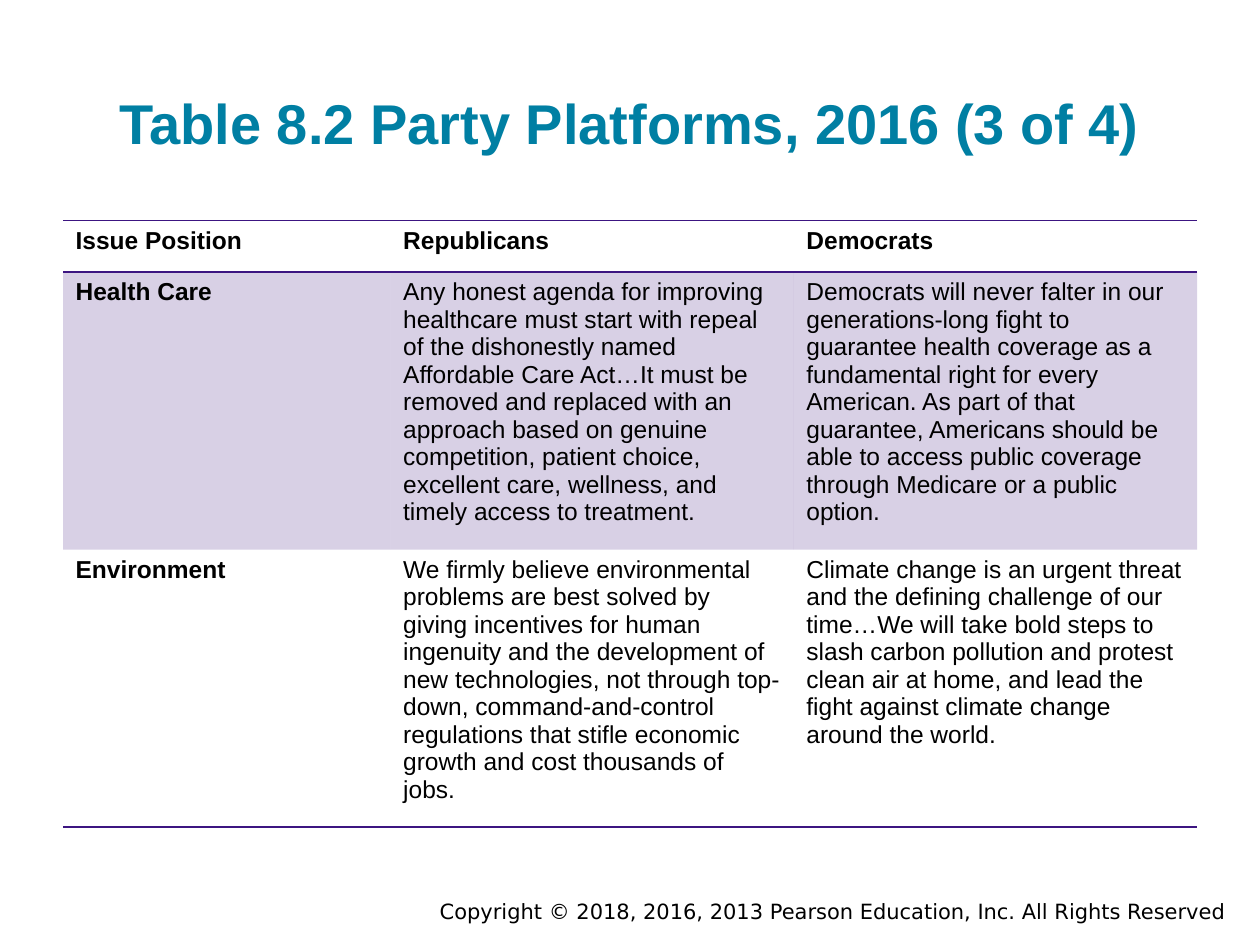
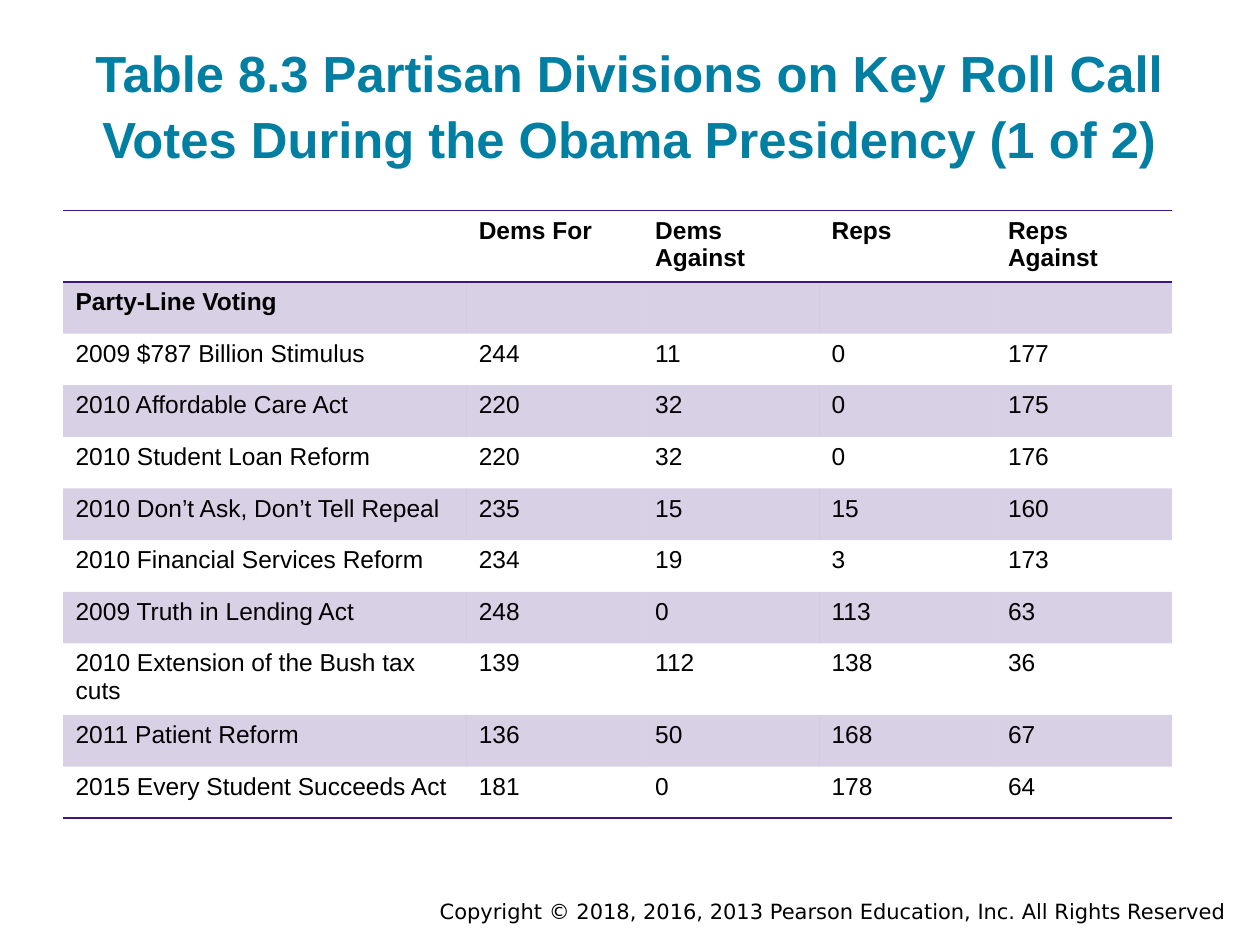
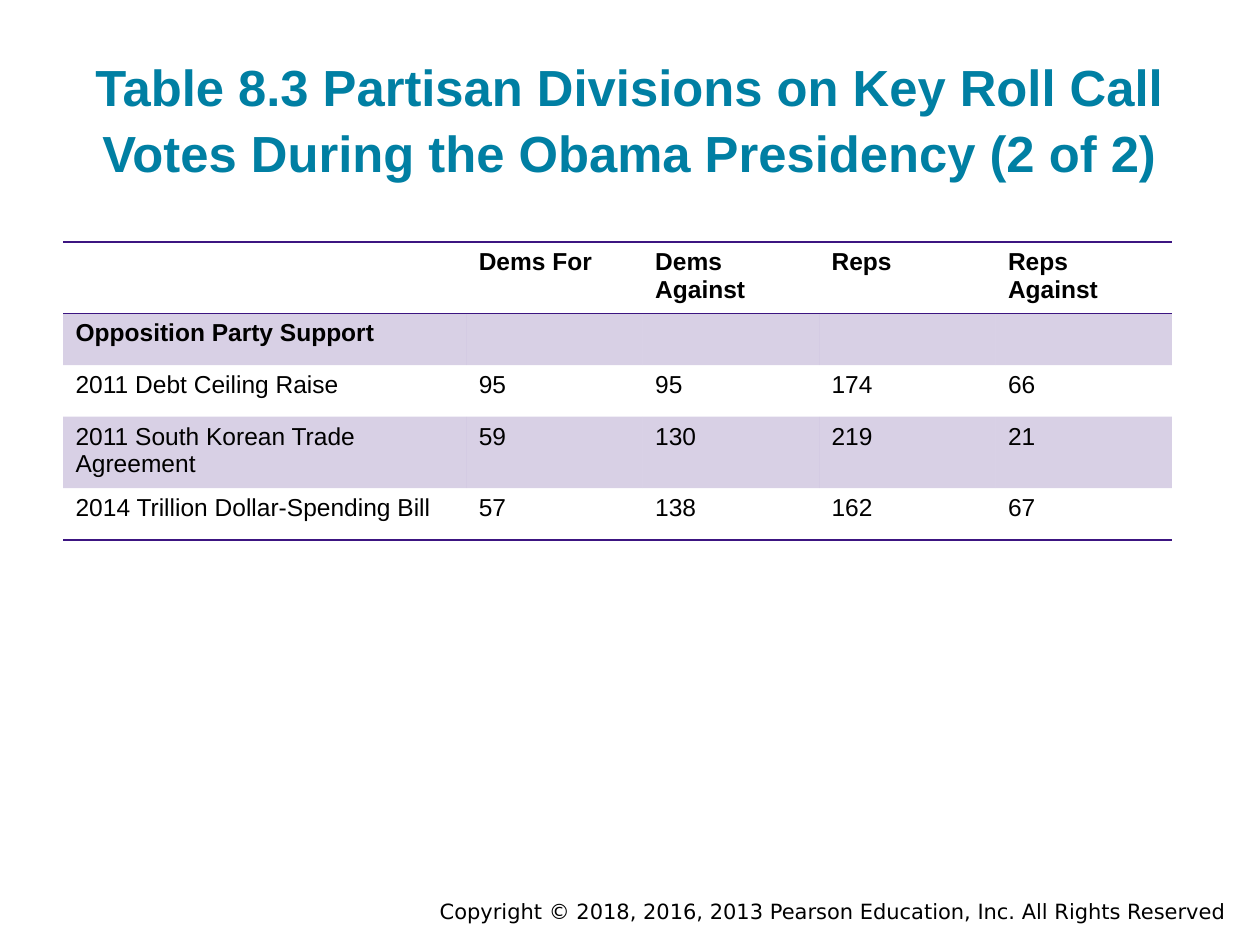
from dataclasses import dataclass

from lxml import etree
from pptx import Presentation
from pptx import util as u
from pptx.dml.color import RGBColor
from pptx.enum import text as t
from pptx.oxml import ns


@dataclass(frozen=True)
class Theme:
    teal: str = "007FA3"
    purple: str = "3C1581"
    black: str = "000000"
    font: str = "Arial"
    footer_font: str = "DejaVu Sans"
    title_size: int = 32
    long_title_size: int = 29
    table_size: int = 14
    footer_size: int = 12
    band_opacity: int = 20
    rule_width: int = 1


theme = Theme()
COPYRIGHT = "Copyright © 2018, 2016, 2013 Pearson Education, Inc. All Rights Reserved"
NO_STYLE_NO_GRID = "{2D5ABB26-0587-4C30-8999-92F81FD0307C}"
ROW_HEIGHT = 0.41
PLATFORM_COLUMNS = [2.6, 3.2, 3.2]
VOTE_COLUMNS = [3.2] + [1.4] * 4
VOTE_HEADER = ["", "Dems For", "Dems Against", "Reps", "Reps Against"]
BOLD_LABELS = {"Health Care", "Environment", "Party-Line Voting", "Opposition Party Support"}

# Each slide: title, title size, title height, table top, column widths, rows
SLIDES = [
    ("Table 8.2 Party Platforms, 2016 (3 of 4)", theme.title_size, 1.1, 1.75, PLATFORM_COLUMNS, [
        ["Issue Position", "Republicans", "Democrats"],
        ["Health Care",
         "Any honest agenda for improving healthcare must start with repeal of the dishonestly "
         "named Affordable Care Act…It must be removed and replaced with an approach based on "
         "genuine competition, patient choice, excellent care, wellness, and timely access to "
         "treatment.",
         "Democrats will never falter in our generations-long fight to guarantee health coverage "
         "as a fundamental right for every American. As part of that guarantee, Americans should "
         "be able to access public coverage through Medicare or a public option."],
        ["Environment",
         "We firmly believe environmental problems are best solved by giving incentives for human "
         "ingenuity and the development of new technologies, not through top-down, "
         "command-and-control regulations that stifle economic growth and cost thousands of jobs.",
         "Climate change is an urgent threat and the defining challenge of our time…We will take "
         "bold steps to slash carbon pollution and protest clean air at home, and lead the fight "
         "against climate change around the world."],
    ]),
    ("Table 8.3 Partisan Divisions on Key Roll Call Votes During the Obama Presidency (1 of 2)",
     theme.long_title_size, 1.2, 1.67, VOTE_COLUMNS, [
        VOTE_HEADER,
        ["Party-Line Voting", "", "", "", ""],
        ["2009 $787 Billion Stimulus", 244, 11, 0, 177],
        ["2010 Affordable Care Act", 220, 32, 0, 175],
        ["2010 Student Loan Reform", 220, 32, 0, 176],
        ["2010 Don’t Ask, Don’t Tell Repeal", 235, 15, 15, 160],
        ["2010 Financial Services Reform", 234, 19, 3, 173],
        ["2009 Truth in Lending Act", 248, 0, 113, 63],
        ["2010 Extension of the Bush tax cuts", 139, 112, 138, 36],
        ["2011 Patient Reform", 136, 50, 168, 67],
        ["2015 Every Student Succeeds Act", 181, 0, 178, 64],
    ]),
    ("Table 8.3 Partisan Divisions on Key Roll Call Votes During the Obama Presidency (2 of 2)",
     theme.long_title_size, 1.31, 1.92, VOTE_COLUMNS, [
        VOTE_HEADER,
        ["Opposition Party Support", "", "", "", ""],
        ["2011 Debt Ceiling Raise", 95, 95, 174, 66],
        ["2011 South Korean Trade Agreement", 59, 130, 219, 21],
        ["2014 Trillion Dollar-Spending Bill", 57, 138, 162, 67],
    ]),
]


def write(frame, text, *, size, font=theme.font, color=theme.black, bold=False,
          align=t.PP_ALIGN.LEFT, line_spacing=None):
    para = frame.paragraphs[0]
    para.alignment = align
    para.line_spacing = line_spacing
    span = para.add_run()
    span.text = text
    span.font.name = font
    span.font.size = u.Pt(size)
    span.font.bold = bold
    span.font.color.rgb = RGBColor.from_string(color)


def format_cell(cell, edges, shaded):
    """Rule the given edges (lnT, lnB), then apply the translucent band or no fill."""
    properties = cell._tc.get_or_add_tcPr()
    for edge in edges:
        line = etree.SubElement(properties, ns.qn(f"a:{edge}"), w=str(u.Pt(theme.rule_width)))
        solid = etree.SubElement(line, ns.qn("a:solidFill"))
        etree.SubElement(solid, ns.qn("a:srgbClr"), val=theme.purple)
    if not shaded:
        cell.fill.background()
        return
    cell.fill.solid()
    cell.fill.fore_color.rgb = RGBColor.from_string(theme.purple)
    color = properties.find(ns.qn("a:solidFill"))[0]
    etree.SubElement(color, ns.qn("a:alpha"), val=str(theme.band_opacity * 1000))


deck = Presentation()
deck.slide_width, deck.slide_height = u.Inches(10), u.Inches(7.5)
title_only = deck.slide_layouts[5]

for heading, heading_size, heading_height, table_top, widths, rows in SLIDES:
    page = deck.slides.add_slide(title_only)

    footer = page.shapes.add_textbox(u.Inches(2), u.Inches(7.08), u.Inches(7.83), u.Inches(0.3))
    footer.text_frame.word_wrap = True
    write(footer.text_frame, COPYRIGHT, size=theme.footer_size, font=theme.footer_font,
          align=t.PP_ALIGN.RIGHT)

    title = page.shapes.title
    title.left, title.top = u.Inches(0.5), u.Inches(0.24)
    title.width, title.height = u.Inches(9), u.Inches(heading_height)
    frame = title.text_frame
    frame.auto_size = t.MSO_AUTO_SIZE.NONE
    frame.word_wrap = True
    frame.vertical_anchor = t.MSO_ANCHOR.BOTTOM
    frame.margin_left = frame.margin_right = u.Inches(0.1)
    frame.margin_top = frame.margin_bottom = u.Inches(0.1)
    write(frame, heading, size=heading_size, color=theme.teal, bold=True,
          align=t.PP_ALIGN.CENTER, line_spacing=1.08)

    holder = page.shapes.add_table(len(rows), len(widths), u.Inches(0.5), u.Inches(table_top),
                                   u.Inches(sum(widths)), u.Inches(ROW_HEIGHT * len(rows)))
    table = holder.table
    table.first_row = table.horz_banding = False
    table._tbl.tblPr.find(ns.qn("a:tableStyleId")).text = NO_STYLE_NO_GRID
    for column, width in zip(table.columns, widths):
        column.width = u.Inches(width)

    for row_index, values in enumerate(rows):
        table.rows[row_index].height = u.Inches(ROW_HEIGHT)
        is_header = row_index == 0
        if is_header:
            edges = ["lnT", "lnB"]
        elif row_index == len(rows) - 1:
            edges = ["lnB"]
        else:
            edges = []
        for column_index, value in enumerate(values):
            cell = table.cell(row_index, column_index)
            format_cell(cell, edges, shaded=row_index % 2 == 1)
            if value != "":
                write(cell.text_frame, str(value), size=theme.table_size,
                      bold=is_header or value in BOLD_LABELS)

deck.save("out.pptx")
